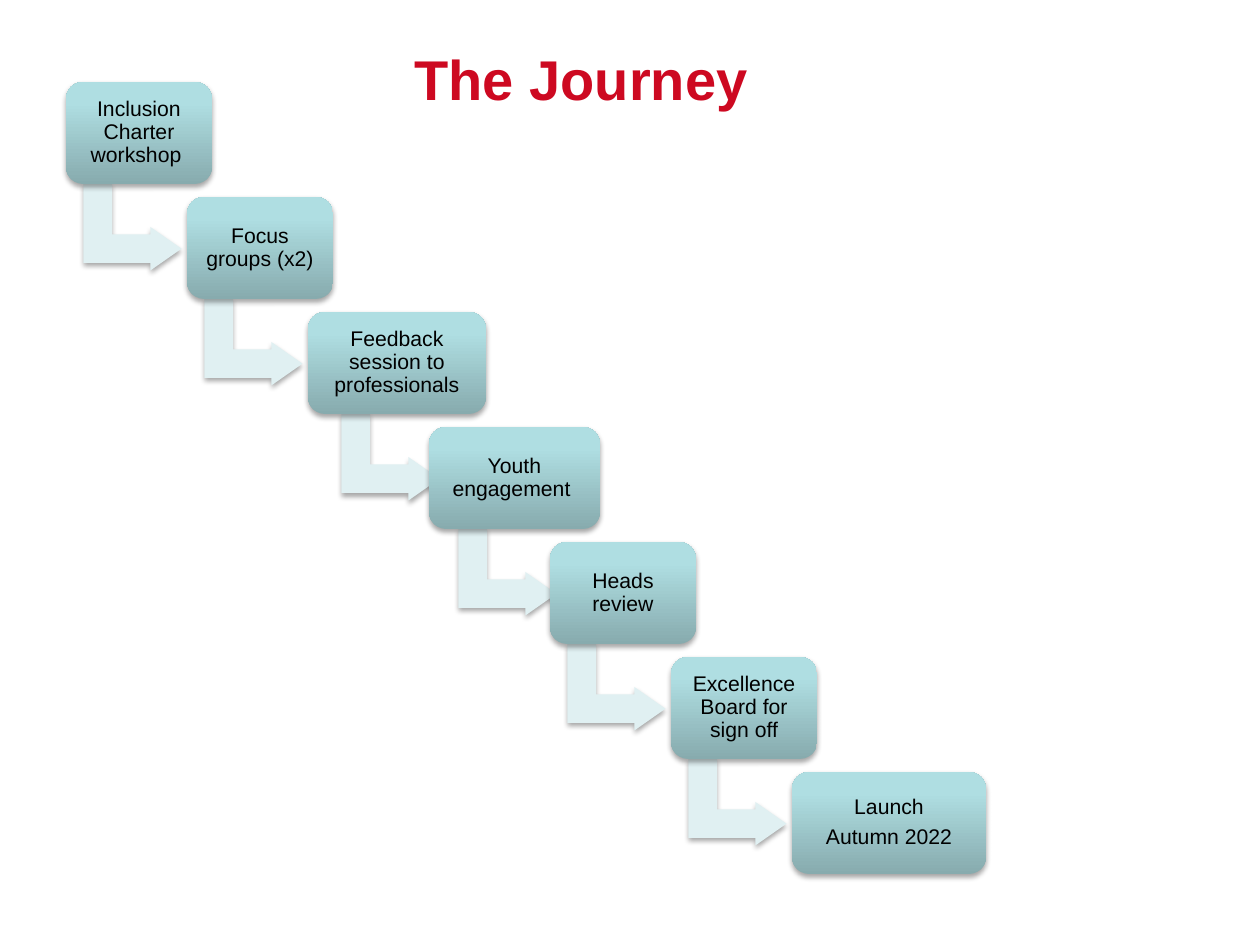
from copy import deepcopy
from dataclasses import dataclass

from lxml.etree import SubElement
from pptx import Presentation
from pptx.dml.color import RGBColor
from pptx.enum.shapes import MSO_SHAPE
from pptx.enum.text import MSO_ANCHOR, PP_ALIGN
from pptx.oxml.ns import qn
from pptx.shapes.autoshape import Shape
from pptx.slide import Slide
from pptx.util import Emu, Pt


@dataclass(frozen=True)
class Theme:
    font: str = "Arial"
    title_size: float = 32
    step_size: float = 12.1
    title: str = "CD0921"
    text: str = "000000"
    arrow: str = "E0F0F2"
    shadow: str = "000000"
    box: tuple = ((0, "87ABAE"), (0.8, "AFDEE2"), (1, "AFE0E4"))


@dataclass(frozen=True)
class Step:
    lines: tuple[str, ...]
    width: int = 146


THEME = Theme()
STEPS = [
    Step(("Inclusion Charter workshop ",)),
    Step(("Focus groups (x2)",)),
    Step(("Feedback session to professionals",), 178),
    Step(("Youth engagement ",), 171),
    Step(("Heads review",)),
    Step(("Excellence Board for sign off",)),
    Step(("Launch", "Autumn 2022"), 194),
]

# Staircase grid, in px
LEFT, TOP = 66, 82
STEP_X, STEP_Y = 121, 115
BOX_H, BOX_PAD = 102, 6
ARROW_W, ARROW_H = 87, 98
ARROW_DX, ARROW_DY = 23, 96


def px(n: float) -> Emu:
    return Emu(round(n * 914400 / 126))


def add_soft_shadow(sp: Shape) -> None:
    sp.shadow.inherit = False
    effects = sp._element.spPr.find(qn("a:effectLst"))
    shadow = SubElement(effects, qn("a:outerShdw"), blurRad=str(Pt(3.1)),
                        dist=str(Pt(1.8)), dir="5400000", rotWithShape="0")
    color = SubElement(shadow, qn("a:srgbClr"), val=THEME.shadow)
    SubElement(color, qn("a:alpha"), val="35000")


def fill_box(sp: Shape) -> None:
    sp.fill.gradient()
    sp.fill.gradient_angle = 90
    stops = sp._element.spPr.find(".//" + qn("a:gsLst"))
    stops.append(deepcopy(stops[-1]))
    for stop, (position, color) in zip(sp.fill.gradient_stops, THEME.box):
        stop.position = position
        stop.color.rgb = RGBColor.from_string(color)


def add_box(slide: Slide, step: Step, x: int, y: int) -> None:
    sp = slide.shapes.add_shape(MSO_SHAPE.ROUNDED_RECTANGLE,
                                px(x), px(y), px(step.width), px(BOX_H))
    fill_box(sp)
    sp.line.fill.background()
    add_soft_shadow(sp)
    tf = sp.text_frame
    tf.word_wrap = True
    tf.vertical_anchor = MSO_ANCHOR.MIDDLE
    tf.margin_left = tf.margin_right = tf.margin_top = tf.margin_bottom = px(BOX_PAD)
    tf.text = "\n".join(step.lines)
    for p in tf.paragraphs:
        p.alignment = PP_ALIGN.CENTER
        p.line_spacing = 0.9
        p.space_after = Pt(4.2)
        p.font.name = THEME.font
        p.font.size = Pt(THEME.step_size)
        p.font.color.rgb = RGBColor.from_string(THEME.text)


def add_arrow(slide: Slide, step: Step, x: int, y: int) -> None:
    # Wider boxes push the arrow right by half of their extra width
    dx = ARROW_DX + (step.width - Step.width) // 2
    sp = slide.shapes.add_shape(MSO_SHAPE.BENT_UP_ARROW, px(x + dx),
                                px(y + ARROW_DY), px(ARROW_W), px(ARROW_H))
    sp.rotation = 90
    for i, value in enumerate((0.328, 0.25, 0.358)):
        sp.adjustments[i] = value
    sp.fill.solid()
    sp.fill.fore_color.rgb = RGBColor.from_string(THEME.arrow)
    sp.line.fill.background()
    add_soft_shadow(sp)


def add_title(slide: Slide, text: str) -> None:
    sp = slide.shapes.title
    sp.left, sp.top, sp.width, sp.height = px(402), px(38), px(816), px(158)
    tf = sp.text_frame
    tf.word_wrap = True
    tf.vertical_anchor = MSO_ANCHOR.TOP
    tf.text = text
    p = tf.paragraphs[0]
    p.alignment = PP_ALIGN.LEFT
    p.font.name = THEME.font
    p.font.size = Pt(THEME.title_size)
    p.font.bold = True
    p.font.color.rgb = RGBColor.from_string(THEME.title)


def main() -> None:
    prs = Presentation()
    prs.slide_width, prs.slide_height = px(1260), px(945)
    slide = prs.slides.add_slide(prs.slide_layouts[5])
    add_title(slide, "The Journey")

    # Steps, each with an arrow down to the next
    for i, step in enumerate(STEPS):
        x, y = LEFT + i * STEP_X, TOP + i * STEP_Y
        if i < len(STEPS) - 1:
            add_arrow(slide, step, x, y)
        add_box(slide, step, x, y)

    prs.save("out.pptx")


if __name__ == "__main__":
    main()
